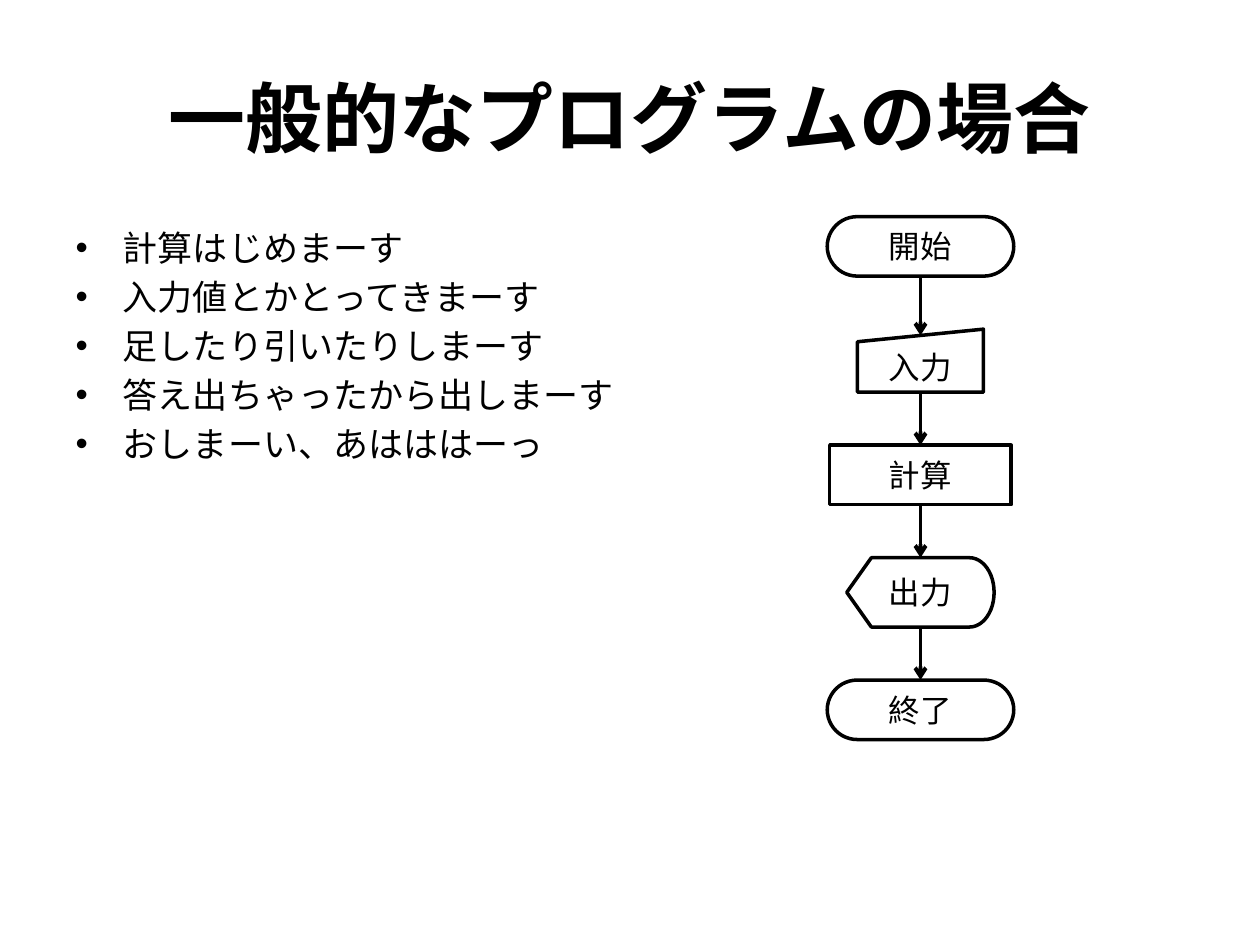
from pptx import Presentation
from pptx.dml.color import RGBColor
from pptx.enum.shapes import MSO_CONNECTOR, MSO_SHAPE as SHAPE
from pptx.enum.text import MSO_ANCHOR, PP_ALIGN
from pptx.oxml.ns import qn
from pptx.util import Pt
from lxml.etree import SubElement

BLACK = RGBColor(0, 0, 0)
JP_FONT = "Noto Sans CJK JP"
SHAPE_FONT = "Calibri"
TOP, BOTTOM = 0, 2  # connection sites


class FlowSlide:
    def __init__(self, prs):
        self.slide = prs.slides.add_slide(prs.slide_layouts[1])
        self.color = BLACK

    def format_run(self, r, size, font, bold=False):
        r.font.size, r.font.name, r.font.bold = Pt(size), font, bold
        r.font.color.rgb = self.color
        if font == JP_FONT:
            SubElement(r.font._element, qn("a:ea"), typeface=font)

    def place(self, sp, left, top, width, height):
        sp.left, sp.top, sp.width, sp.height = map(Pt, (left, top, width, height))

    def title(self, text, box):
        sp = self.slide.shapes.title
        self.place(sp, *box)
        sp.text_frame.text = text
        self.format_run(sp.text_frame.paragraphs[0].runs[0], 44, JP_FONT, True)

    def bullets(self, items, box, indent):
        sp = self.slide.placeholders[1]
        self.place(sp, *box)
        tf = sp.text_frame
        tf.text = "\n".join(items)
        for p in tf.paragraphs:
            pPr = p._p.get_or_add_pPr()
            pPr.set("marL", str(Pt(indent)))
            pPr.set("indent", str(-Pt(indent)))
            self.format_run(p.runs[0], 20, JP_FONT)

    def step(self, kind, text, center, top, width, height):
        sp = self.slide.shapes.add_shape(
            kind, Pt(center - width / 2), Pt(top), Pt(width), Pt(height))
        sp.shadow.inherit = False
        sp.fill.background()
        sp.line.color.rgb, sp.line.width = self.color, Pt(2)
        tf = sp.text_frame
        tf.margin_left = tf.margin_right = tf.margin_top = tf.margin_bottom = 0
        tf.vertical_anchor = MSO_ANCHOR.MIDDLE
        tf.text = text
        p = tf.paragraphs[0]
        p.alignment = PP_ALIGN.CENTER
        self.format_run(p.runs[0], 18, SHAPE_FONT)
        return sp

    def arrow(self, above, below):
        x = above.left + above.width // 2
        # The manual input's sloping top is 10% down at its middle
        slanted = below.auto_shape_type == SHAPE.FLOWCHART_MANUAL_INPUT
        y = below.top + (below.height // 10 if slanted else 0)
        line = self.slide.shapes.add_connector(
            MSO_CONNECTOR.STRAIGHT, x, above.top + above.height, x, y)
        line.begin_connect(above, BOTTOM)
        if not slanted:
            line.end_connect(below, TOP)
        line.line.color.rgb, line.line.width = self.color, Pt(2.25)
        SubElement(line.line._get_or_add_ln(), qn("a:tailEnd"), type="arrow")
        SubElement(line._element.spPr, qn("a:effectLst"))


def main():
    prs = Presentation()
    prs.slide_width, prs.slide_height = Pt(720), Pt(540)
    s = FlowSlide(prs)

    # Title and list
    s.title("一般的なプログラムの場合", (36, 21.6, 648, 90))
    s.bullets(["計算はじめまーす", "入力値とかとってきまーす", "足したり引いたりしまーす",
               "答え出ちゃったから出しまーす", "おしまーい、あはははーっ"],
              (36, 126, 346.3, 356.4), 27)

    # Flowchart: steps stacked on one axis with equal gaps
    center, top, gap = 526, 123.8, 30.3
    flow = [
        (SHAPE.FLOWCHART_TERMINATOR, "開始", 106.6, 34),
        (SHAPE.FLOWCHART_MANUAL_INPUT, "入力", 72, 36),
        (SHAPE.FLOWCHART_PROCESS, "計算", 103.7, 34),
        (SHAPE.FLOWCHART_DISPLAY, "出力", 84.2, 39.6),
        (SHAPE.FLOWCHART_TERMINATOR, "終了", 106.6, 34),
    ]
    steps = []
    for kind, text, width, height in flow:
        steps.append(s.step(kind, text, center, top, width, height))
        top += height + gap

    # Arrows between neighbouring steps
    for above, below in zip(steps, steps[1:]):
        s.arrow(above, below)

    prs.save("out.pptx")


if __name__ == "__main__":
    main()
